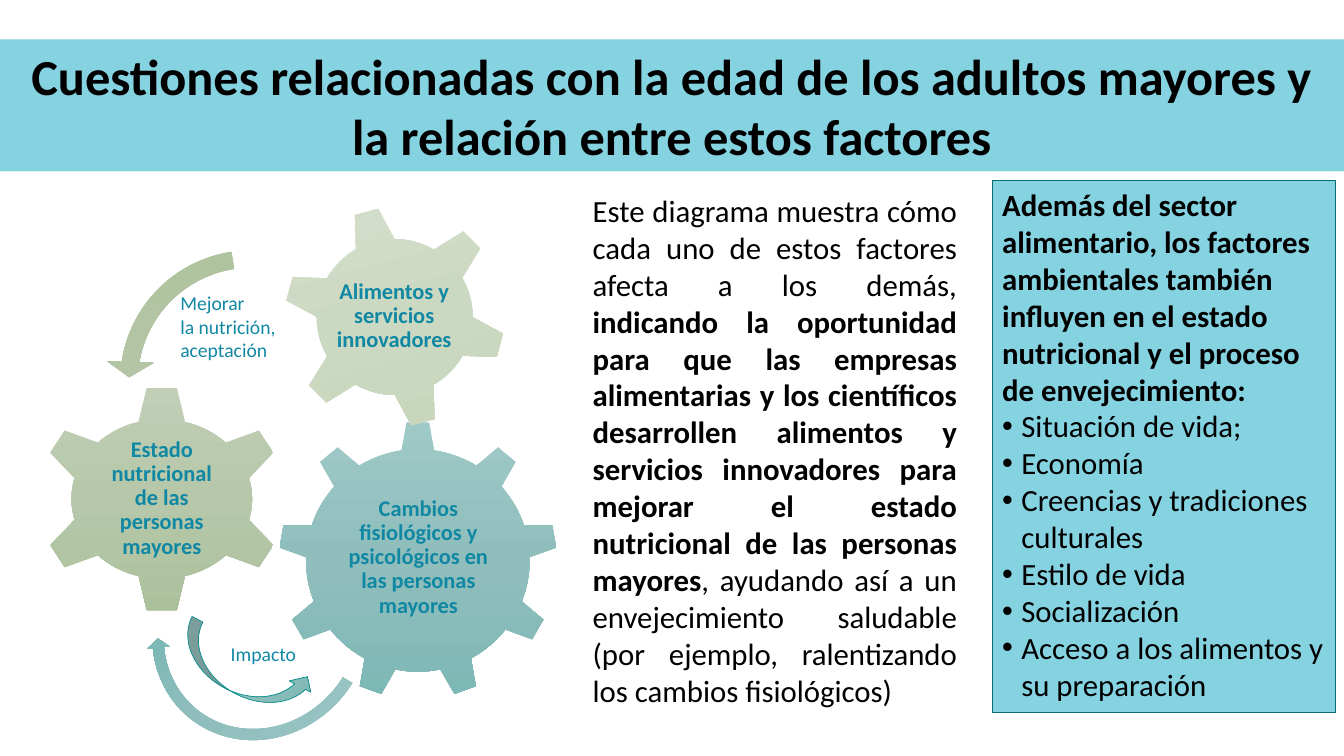
from dataclasses import dataclass

from lxml.etree import SubElement
from pptx import Presentation
from pptx.dml.color import RGBColor
from pptx.enum.shapes import MSO_SHAPE as Preset
from pptx.enum.text import MSO_ANCHOR as Anchor, MSO_AUTO_SIZE as AutoSize, PP_ALIGN as Align
from pptx.oxml.ns import qn
from pptx.util import Pt

PX = 9144  # 100 px to the inch


@dataclass(frozen=True)
class Theme:
    font: str = "Calibri"
    ink: str = "000000"
    label: str = "1188A3"
    panel: str = "85D2E1"
    panel_line: str = "086D6E"
    arrow_line: str = "0D9390"
    teal: tuple = ((0, "9EC9C7"), (50, "90BEBC"), (100, "7CB8B5"))
    teal_arrow: tuple = ((1, "9EC9C7"), (50, "90BEBC"), (67, "7CB8B5"))
    sage: tuple = ((0, "C1CFB6"), (50, "B6C7AA"), (100, "ABC19C"))
    sage_arrow: tuple = ((0, "ACC199"), (75, "B6C7AA"), (100, "ABC19C"))
    pale: tuple = ((0, "D6E0CD"), (50, "CCD9C2"), (100, "C6D5B9"))
    title_size: int = 36
    body_size: int = 22
    gear_size: int = 16
    note_size: int = 14


THEME = Theme()

TITLE = "Cuestiones relacionadas con la edad de los adultos mayores y la relación entre estos factores"
EXPLANATION = (
    ("Este diagrama muestra cómo cada uno de estos factores afecta a los demás, ", False),
    ("indicando la oportunidad para que las empresas alimentarias y los científicos desarrollen "
     "alimentos y servicios innovadores para mejorar el estado nutricional de las personas mayores", True),
    (", ayudando así a un envejecimiento saludable (por ejemplo, ralentizando los cambios fisiológicos)", False),
)
FACTORS_HEADING = ("Además del sector alimentario, los factores ambientales también influyen "
                   "en el estado nutricional y el proceso de envejecimiento:")
FACTORS = ("Situación de vida;", "Economía", "Creencias y tradiciones culturales",
           "Estilo de vida", "Socialización", "Acceso a los alimentos y su preparación")

# Preset, place, rotation, stops, label, label place
GEARS = (
    (Preset.GEAR_9, (276, 418, 277, 276), 0, THEME.teal,
     "Cambios fisiológicos y psicológicos en las personas mayores", (332, 482, 166, 142)),
    (Preset.GEAR_6, (37, 382, 247, 226), 0, THEME.sage,
     "Estado nutricional de las personas mayores", (97, 439, 127, 111)),
    (Preset.GEAR_6, (281, 204, 221, 221), 345, THEME.pale,
     "Alimentos y servicios innovadores", (329, 252, 124, 124)),
)
# Preset, place, rotation, stops, adjustments, outline
ARROWS = (
    (Preset.CIRCULAR_ARROW, (140, 513, 239, 221), 127.3, THEME.teal_arrow,
     (0.05, 2.99, 25.35, 158.21, 0.05), None),
    (Preset.LEFT_CIRCULAR_ARROW, (105, 234, 288, 288), 14.1, THEME.sage_arrow,
     (0.06, 4.3, 104.89, 148.38, 0.08), None),
    (Preset.CURVED_RIGHT_ARROW, (218, 595, 48, 141), 297.6, THEME.teal, (), THEME.arrow_line),
)


def emu(place):
    return [length * PX for length in place]


def add_span(para, text, *, size, color=THEME.ink, bold=False):
    span = para.add_run()
    span.text = text
    font = span.font
    font.name, font.size, font.bold = THEME.font, Pt(size), bold
    font.color.rgb = RGBColor.from_string(color)


def write(para, text, *, align=Align.LEFT, spacing=1.0, **style):
    """Fill a paragraph with a text, or with (text, bold) pieces."""
    para.alignment, para.line_spacing, para.space_before = align, spacing, Pt(0)
    if isinstance(text, str):
        add_span(para, text, **style)
    else:
        for piece, bold in text:
            add_span(para, piece, bold=bold, **style)


def set_bullet(para, indent, char=None):
    props = para._p.get_or_add_pPr()
    props.set("marL", str(indent * PX))
    props.set("indent", str(-indent * PX))
    if char:
        SubElement(props, qn("a:buFont"), typeface="Arial")
        SubElement(props, qn("a:buChar"), char=char)
    else:
        SubElement(props, qn("a:buNone"))


def add_text(page, place, lines, *, wrap=True, inset=None, anchor=Anchor.TOP, **style):
    frame = page.shapes.add_textbox(*emu(place)).text_frame
    frame.word_wrap, frame.vertical_anchor = wrap, anchor
    if inset is not None:
        frame.margin_left = frame.margin_right = inset * PX
        frame.margin_top = frame.margin_bottom = inset * PX
    for index, line in enumerate(lines):
        write(frame.add_paragraph() if index else frame.paragraphs[0], line, **style)


def fill_gradient(shape, stops):
    shape.fill.gradient()
    shape.fill.gradient_angle = 270
    stop_list = shape._element.spPr.find(".//" + qn("a:gsLst"))
    stop_list.clear()
    for percent, color in stops:
        stop = SubElement(stop_list, qn("a:gs"), pos=str(percent * 1000))
        SubElement(stop, qn("a:srgbClr"), val=color)


def set_outline(shape, color):
    if color:
        shape.line.color.rgb = RGBColor.from_string(color)
        shape.line.width = Pt(0.5)
    else:
        shape.line.fill.background()


def add_figure(page, preset, place, rotation, stops, adjustments=(), outline=None):
    shape = page.shapes.add_shape(preset, *emu(place))
    shape.shadow.inherit = False
    shape.rotation = rotation
    for index, value in enumerate(adjustments):
        shape.adjustments[index] = value
    fill_gradient(shape, stops)
    set_outline(shape, outline)


def place_panel(panel, place, anchor, outline=None):
    panel.left, panel.top, panel.width, panel.height = emu(place)
    panel.fill.solid()
    panel.fill.fore_color.rgb = RGBColor.from_string(THEME.panel)
    set_outline(panel, outline)
    frame = panel.text_frame
    frame.word_wrap, frame.auto_size, frame.vertical_anchor = True, AutoSize.NONE, anchor
    return frame


def main():
    deck = Presentation()
    deck.slide_width, deck.slide_height = emu((1333, 750))
    page = deck.slides.add_slide(deck.slide_layouts[1])

    # Title band
    title = place_panel(page.shapes.title, (0, 39, 1333, 131), Anchor.MIDDLE)
    write(title.paragraphs[0], TITLE, align=Align.CENTER, size=THEME.title_size, bold=True)

    # Environmental factors
    factors = place_panel(page.placeholders[1], (984, 179, 340, 528), Anchor.TOP, THEME.panel_line)
    heading = factors.paragraphs[0]
    set_bullet(heading, 0)
    write(heading, FACTORS_HEADING, size=THEME.body_size, bold=True)
    for factor in FACTORS:
        para = factors.add_paragraph()
        set_bullet(para, 19, "•")
        write(para, factor, size=THEME.body_size)

    # Gears and their labels
    for preset, place, rotation, stops, label, label_place in GEARS:
        add_figure(page, preset, place, rotation, stops)
        add_text(page, label_place, [label], inset=2, anchor=Anchor.MIDDLE, align=Align.CENTER,
                 spacing=0.9, size=THEME.gear_size, color=THEME.label, bold=True)

    # Arrows and their notes
    for arrow in ARROWS:
        add_figure(page, *arrow)
    note = dict(size=THEME.note_size, color=THEME.label)
    add_text(page, (169, 284, 124, 81), ["Mejorar", "la nutrición,", "aceptación"], **note)
    add_text(page, (219, 632, 90, 34), ["Impacto"], wrap=False, **note)

    # Explanation of the diagram
    add_text(page, (578, 185, 381, 528), [EXPLANATION], align=Align.JUSTIFY, size=THEME.body_size)

    deck.save("out.pptx")


if __name__ == "__main__":
    main()
